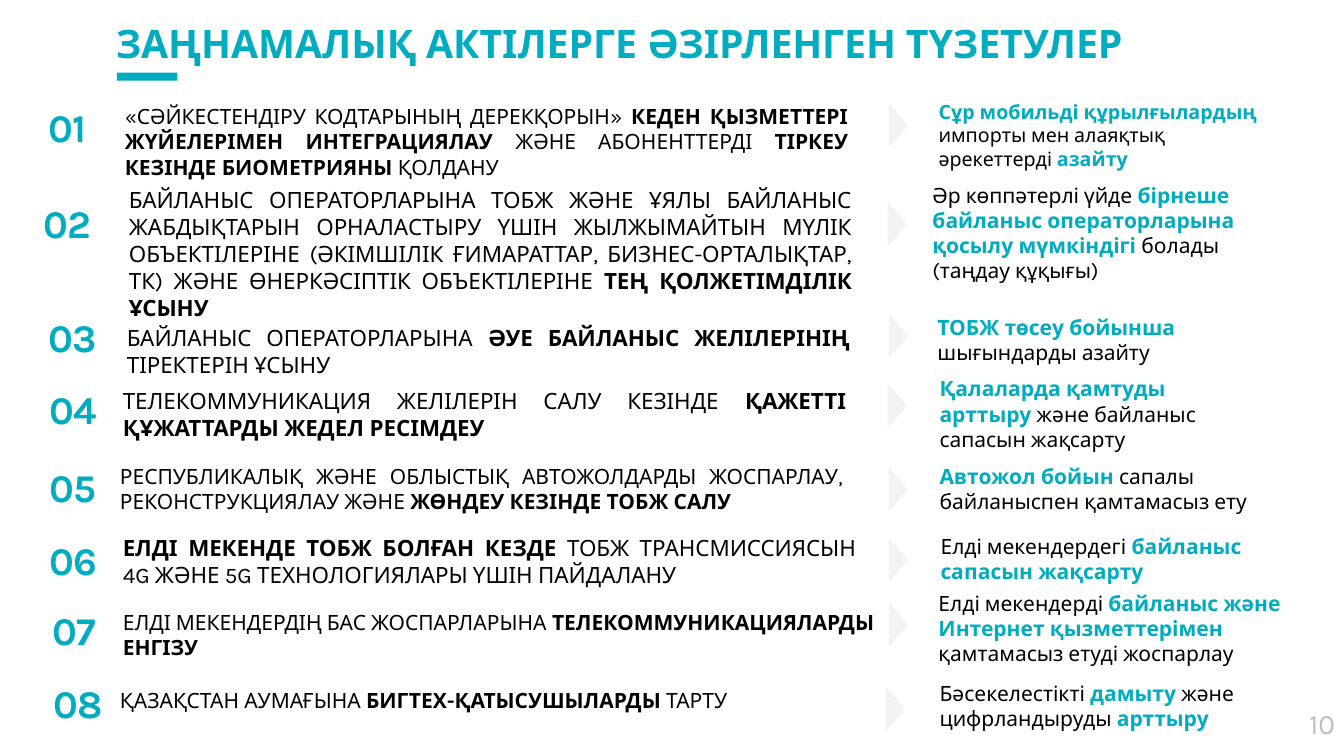
from dataclasses import dataclass

from pptx import Presentation, util as u
from pptx.dml.color import RGBColor
from pptx.enum import shapes, text


@dataclass(frozen=True)
class Theme:
    font: str = "Karla"
    accent: str = "00ACC0"
    ink: str = "000000"
    arrow: str = "F2F2F2"
    muted: str = "BFBFBF"
    heading: int = 28
    page: int = 20
    large: int = 16
    body: int = 15
    small: int = 14


THEME = Theme()
WIDTH, HEIGHT = 13.33, 7.5
NUMBER_X, TASK_X, ARROW_X, BENEFIT_X = 0.39, 1.12, 8.69, 9.21
NUMBER_W, TASK_W = 0.83, 7.37
ARROW_W, ARROW_H = 0.44, 0.19
JUSTIFY, LEFT, RIGHT = text.PP_ALIGN.JUSTIFY, text.PP_ALIGN.LEFT, text.PP_ALIGN.RIGHT

TITLE = "*ЗАҢНАМАЛЫҚ АКТІЛЕРГЕ ӘЗІРЛЕНГЕН ТҮЗЕТУЛЕР*"
PAGE = "10"

TASKS = [
    ("«СӘЙКЕСТЕНДІРУ КОДТАРЫНЫҢ ДЕРЕКҚОРЫН» *КЕДЕН ҚЫЗМЕТТЕРІ ЖҮЙЕЛЕРІМЕН "
     "ИНТЕГРАЦИЯЛАУ* ЖӘНЕ АБОНЕНТТЕРДІ *ТІРКЕУ КЕЗІНДЕ БИОМЕТРИЯНЫ* ҚОЛДАНУ",
     3, THEME.body, JUSTIFY, TASK_W),
    ("БАЙЛАНЫС ОПЕРАТОРЛАРЫНА ТОБЖ ЖӘНЕ ҰЯЛЫ БАЙЛАНЫС ЖАБДЫҚТАРЫН ОРНАЛАСТЫРУ "
     "ҮШІН ЖЫЛЖЫМАЙТЫН МҮЛІК ОБЪЕКТІЛЕРІНЕ (ӘКІМШІЛІК ҒИМАРАТТАР, "
     "БИЗНЕС-ОРТАЛЫҚТАР, ТК) ЖӘНЕ ӨНЕРКӘСІПТІК ОБЪЕКТІЛЕРІНЕ *ТЕҢ ҚОЛЖЕТІМДІЛІК ҰСЫНУ*",
     5, THEME.large, JUSTIFY, TASK_W),
    ("БАЙЛАНЫС ОПЕРАТОРЛАРЫНА *ӘУЕ БАЙЛАНЫС ЖЕЛІЛЕРІНІҢ* ТІРЕКТЕРІН ҰСЫНУ",
     2, THEME.large, JUSTIFY, TASK_W),
    ("ТЕЛЕКОММУНИКАЦИЯ ЖЕЛІЛЕРІН САЛУ КЕЗІНДЕ *ҚАЖЕТТІ ҚҰЖАТТАРДЫ ЖЕДЕЛ РЕСІМДЕУ*",
     2, THEME.large, JUSTIFY, TASK_W),
    ("РЕСПУБЛИКАЛЫҚ ЖӘНЕ ОБЛЫСТЫҚ АВТОЖОЛДАРДЫ ЖОСПАРЛАУ, РЕКОНСТРУКЦИЯЛАУ ЖӘНЕ "
     "*ЖӨНДЕУ КЕЗІНДЕ ТОБЖ САЛУ*", 2, THEME.body, JUSTIFY, TASK_W),
    ("*ЕЛДІ МЕКЕНДЕ ТОБЖ БОЛҒАН КЕЗДЕ* ТОБЖ ТРАНСМИССИЯСЫН 4G ЖӘНЕ 5G "
     "ТЕХНОЛОГИЯЛАРЫ ҮШІН ПАЙДАЛАНУ", 2, THEME.large, JUSTIFY, 7.47),
    ("ЕЛДІ МЕКЕНДЕРДІҢ БАС ЖОСПАРЛАРЫНА *ТЕЛЕКОММУНИКАЦИЯЛАРДЫ ЕНГІЗУ*",
     2, THEME.body, LEFT, 7.7),
    ("ҚАЗАҚСТАН АУМАҒЫНА *БИГТЕХ-ҚАТЫСУШЫЛАРДЫ* ТАРТУ", 1, THEME.body, LEFT, 7.53),
]

BENEFITS = [
    ("*Сұр мобильді құрылғылардың* импорты мен алаяқтық әрекеттерді *азайту*",
     3, THEME.small, 3.59),
    ("Әр көппәтерлі үйде *бірнеше байланыс операторларына қосылу мүмкіндігі* "
     "болады\n(таңдау құқығы)", 4, THEME.body, 3.87),
    ("*ТОБЖ төсеу бойынша* шығындарды азайту", 2, THEME.body, 3.67),
    ("*Қалаларда қамтуды арттыру* және байланыс сапасын жақсарту", 3, THEME.body, 3.37),
    ("*Автожол бойын* сапалы байланыспен қамтамасыз ету", 2, THEME.body, 3.58),
    ("Елді мекендердегі *байланыс сапасын жақсарту*", 2, THEME.body, 3.25),
    ("Елді мекендерді *байланыс және Интернет қызметтерімен* қамтамасыз етуді жоспарлау",
     3, THEME.body, 4.1),
    ("Бәсекелестікті *дамыту* және цифрландыруды *арттыру*", 2, THEME.body, 4.1),
]

NUMBER_TOPS = [0.98, 1.93, 3.06, 3.77, 4.55, 5.27, 5.97, 6.69]
TASK_TOPS = [0.98, 1.8, 3.17, 3.79, 4.55, 5.25, 6, 6.77]
ARROW_TOPS = [1.15, 2.13, 3.24, 3.93, 4.76, 5.46, 6.1, 6.94]
BENEFIT_TOPS = [0.94, 1.76, 3.07, 3.68, 4.55, 5.24, 5.81, 6.7]
NUMBER_SHIFTS = [-0.01, -0.06, -0.01, 0, 0, 0, 0.03, 0.04]
TASK_SHIFTS = [0.02, 0.06, 0.04, 0, -0.03, 0, 0, -0.03]
ARROW_SHIFTS = [0, -0.01, 0, -0.01, 0, 0, 0, -0.03]
BENEFIT_SHIFTS = [0, -0.06, -0.01, 0.01, 0.01, 0.02, 0, 0.01]


def write(slide, content, left, top, width, *, size, lines=1, align=LEFT,
          color=THEME.ink, strong=THEME.ink):
    height = lines * size * 1.2 / 72 + 0.1
    box = slide.shapes.add_textbox(*map(u.Inches, (left, top, width, height)))
    frame = box.text_frame
    frame.word_wrap = True
    frame.auto_size = text.MSO_AUTO_SIZE.SHAPE_TO_FIT_TEXT
    paragraph = frame.paragraphs[0]
    paragraph.alignment = align
    for index, part in enumerate(content.split("*")):
        bold = index % 2 == 1
        for row, piece in enumerate(part.split("\n")):
            if row:
                paragraph.add_line_break()
            if piece:
                run = paragraph.add_run()
                run.text = piece
                run.font.name = THEME.font
                run.font.size = u.Pt(size)
                run.font.bold = bold
                run.font.color.rgb = RGBColor.from_string(strong if bold else color)


def block(slide, kind, left, top, width, height, color, rotation=0):
    shape = slide.shapes.add_shape(kind, *map(u.Inches, (left, top, width, height)))
    shape.rotation = rotation
    shape.shadow.inherit = False
    shape.fill.solid()
    shape.fill.fore_color.rgb = RGBColor.from_string(color)
    shape.line.fill.background()


def main():
    deck = Presentation()
    deck.slide_width, deck.slide_height = u.Inches(WIDTH), u.Inches(HEIGHT)
    slide = deck.slides.add_slide(deck.slide_layouts[6])
    kinds = shapes.MSO_SHAPE

    write(slide, TITLE, 1.05, 0.14, 12.2, size=THEME.heading, strong=THEME.accent)
    block(slide, kinds.RECTANGLE, 1.16, 0.72, 0.6, 0.08, THEME.accent)

    for i, (task, benefit) in enumerate(zip(TASKS, BENEFITS)):
        write(slide, f"*{i + 1:02}*", NUMBER_X + NUMBER_SHIFTS[i], NUMBER_TOPS[i],
              NUMBER_W, size=THEME.heading, strong=THEME.accent)
        wording, lines, size, align, width = task
        write(slide, wording, TASK_X + TASK_SHIFTS[i], TASK_TOPS[i], width,
              size=size, lines=lines, align=align)
        block(slide, kinds.ISOSCELES_TRIANGLE, ARROW_X + ARROW_SHIFTS[i], ARROW_TOPS[i],
              ARROW_W, ARROW_H, THEME.arrow, rotation=90)
        wording, lines, size, width = benefit
        write(slide, wording, BENEFIT_X + BENEFIT_SHIFTS[i], BENEFIT_TOPS[i], width,
              size=size, lines=lines, strong=THEME.accent)

    write(slide, PAGE, 12.66, 6.96, 0.68, size=THEME.page, align=RIGHT, color=THEME.muted)
    deck.save("out.pptx")


if __name__ == "__main__":
    main()
